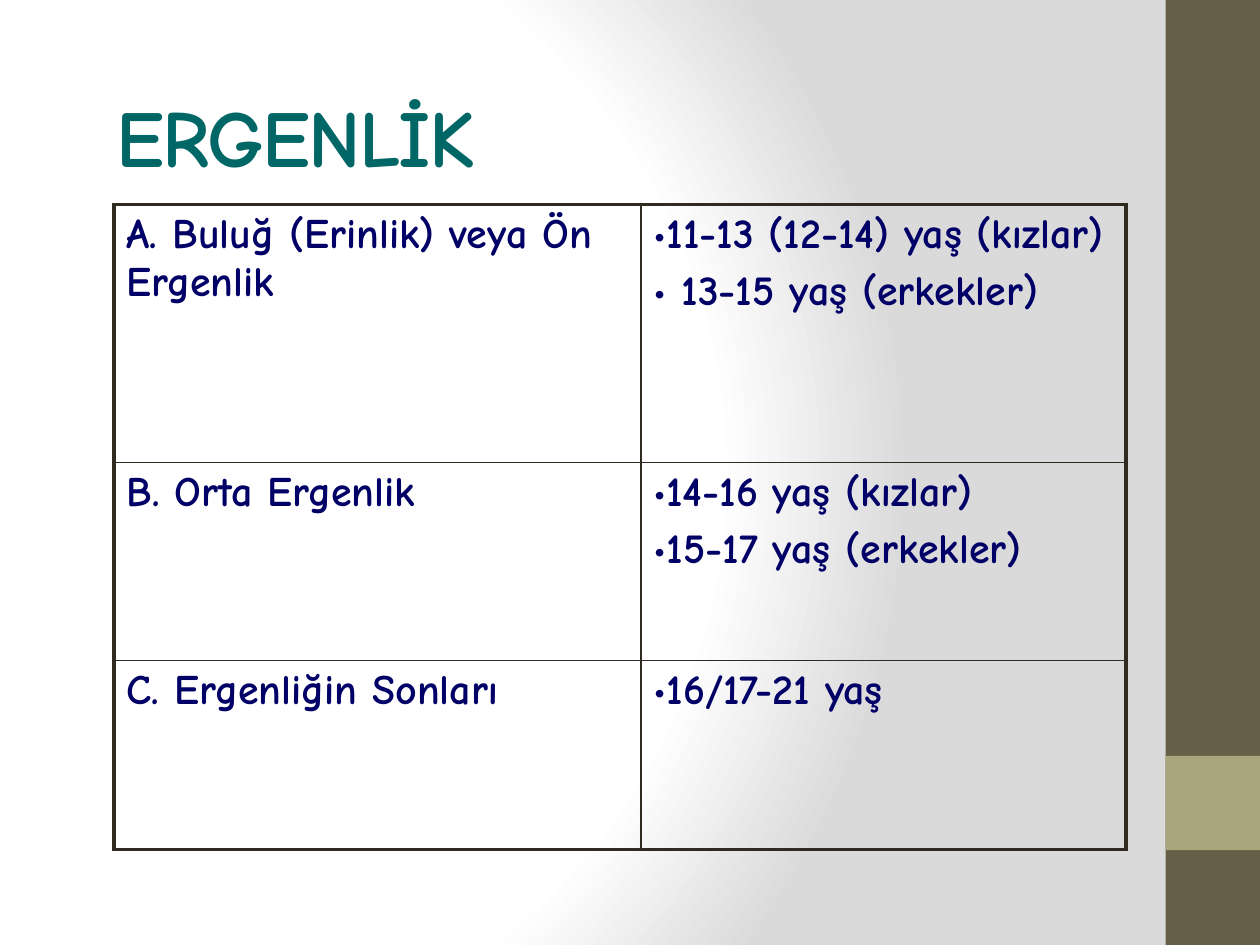
from dataclasses import dataclass

from lxml.etree import SubElement
from pptx import Presentation
from pptx.dml.color import RGBColor
from pptx.enum.shapes import MSO_SHAPE
from pptx.enum.text import MSO_ANCHOR
from pptx.oxml.ns import qn
from pptx.slide import Slide
from pptx.table import _Cell
from pptx.text.text import _Paragraph
from pptx.util import Cm, Pt

FONT = "Comic Neue"
TITLE_COLOR, TEXT_COLOR, BORDER_COLOR = "006666", "000066", "2F2B20"
OUTER_LINE, INNER_LINE = Pt(2.25), Pt(1)
COLUMN_WIDTHS = (10.62, 9.78)


@dataclass(frozen=True)
class Band:
    top: float
    height: float
    color: str


@dataclass(frozen=True)
class Stage:
    name: str
    ages: tuple[str, ...]
    height: float


BANDS = (Band(0, 19.05, "675E47"), Band(15.24, 1.9, "A9A57C"))
STAGES = (
    Stage("A. Buluğ (Erinlik) veya Ön Ergenlik",
          ("11-13 (12-14) yaş (kızlar)", " 13-15 yaş (erkekler)"), 5.2),
    Stage("B. Orta Ergenlik",
          ("14-16 yaş (kızlar)", "15-17 yaş (erkekler)"), 3.99),
    Stage("C. Ergenliğin Sonları", ("16/17-21 yaş",), 3.81),
)


def rgb(color: str) -> RGBColor:
    return RGBColor.from_string(color)


def add_background(slide: Slide) -> None:
    """Radial gradient: white centre, grey towards the right edge."""
    fill = slide.background.fill
    fill.gradient()
    gradient = slide.background._cSld.find(".//" + qn("a:gradFill"))
    for child in list(gradient):
        gradient.remove(child)
    stops = SubElement(gradient, qn("a:gsLst"))
    for position, color in ((0, "FFFFFF"), (75, "FFFFFF"), (100, "DADADA")):
        stop = SubElement(stops, qn("a:gs"), pos=str(position * 1000))
        SubElement(stop, qn("a:srgbClr"), val=color)
    circle = SubElement(gradient, qn("a:path"), {"path": "circle"})
    SubElement(circle, qn("a:fillToRect"),
               l="20000", t="50000", r="100000", b="50000")


def add_band(slide: Slide, band: Band) -> None:
    shape = slide.shapes.add_shape(MSO_SHAPE.RECTANGLE, Cm(23.5), Cm(band.top),
                                   Cm(1.9), Cm(band.height))
    shape.shadow.inherit = False
    shape.fill.solid()
    shape.fill.fore_color.rgb = rgb(band.color)
    shape.line.fill.background()


def set_font(paragraph: _Paragraph, size: float, color: str) -> None:
    font = paragraph.font
    font.name, font.size, font.bold = FONT, Pt(size), True
    font.color.rgb = rgb(color)


def add_title(slide: Slide, text: str) -> None:
    box = slide.shapes.add_textbox(Cm(2.1), Cm(1.54), Cm(22.02), Cm(2.39))
    frame = box.text_frame
    frame.word_wrap = True
    frame.vertical_anchor = MSO_ANCHOR.MIDDLE
    paragraph = frame.paragraphs[0]
    paragraph.text = text
    set_font(paragraph, 46, TITLE_COLOR)
    paragraph.runs[0]._r.get_or_add_rPr().set("spc", "-100")


def write_cell(cell: _Cell, lines: tuple[str, ...], bulleted: bool) -> None:
    cell.fill.background()
    cell.text = "\n".join(lines)
    for paragraph in cell.text_frame.paragraphs:
        properties = paragraph._p.get_or_add_pPr()
        before = SubElement(properties, qn("a:spcBef"))
        SubElement(before, qn("a:spcPct"), val="20000")
        if bulleted:
            SubElement(properties, qn("a:buFont"), typeface=FONT)
            SubElement(properties, qn("a:buChar"), char="•")
        set_font(paragraph, 24, TEXT_COLOR)


def set_borders(cell: _Cell, outer_sides: dict[str, bool]) -> None:
    properties = cell._tc.get_or_add_tcPr()
    for index, (side, is_outer) in enumerate(outer_sides.items()):
        width = OUTER_LINE if is_outer else INNER_LINE
        line = properties.makeelement(qn(f"a:ln{side}"), {"w": str(int(width))})
        fill = SubElement(line, qn("a:solidFill"))
        SubElement(fill, qn("a:srgbClr"), val=BORDER_COLOR)
        properties.insert(index, line)


def add_stage_table(slide: Slide, stages: tuple[Stage, ...]) -> None:
    table = slide.shapes.add_table(
        len(stages), len(COLUMN_WIDTHS), Cm(2.3), Cm(4.12),
        Cm(sum(COLUMN_WIDTHS)), Cm(sum(stage.height for stage in stages))).table
    table.first_row = table.horz_banding = False
    for column, width in zip(table.columns, COLUMN_WIDTHS):
        column.width = Cm(width)
    for row, stage in enumerate(stages):
        table.rows[row].height = Cm(stage.height)
        for column, lines in enumerate(((stage.name,), stage.ages)):
            cell = table.cell(row, column)
            write_cell(cell, lines, bulleted=column == 1)
            set_borders(cell, {"L": column == 0, "R": column == 1,
                               "T": row == 0, "B": row == len(stages) - 1})


def main() -> None:
    presentation = Presentation()
    presentation.slide_width, presentation.slide_height = Cm(25.4), Cm(19.05)
    slide = presentation.slides.add_slide(presentation.slide_layouts[6])

    # Background and side bands
    add_background(slide)
    for band in BANDS:
        add_band(slide, band)

    # Title and stages of adolescence
    add_title(slide, "ERGENLİK")
    add_stage_table(slide, STAGES)

    presentation.save("out.pptx")


if __name__ == "__main__":
    main()
